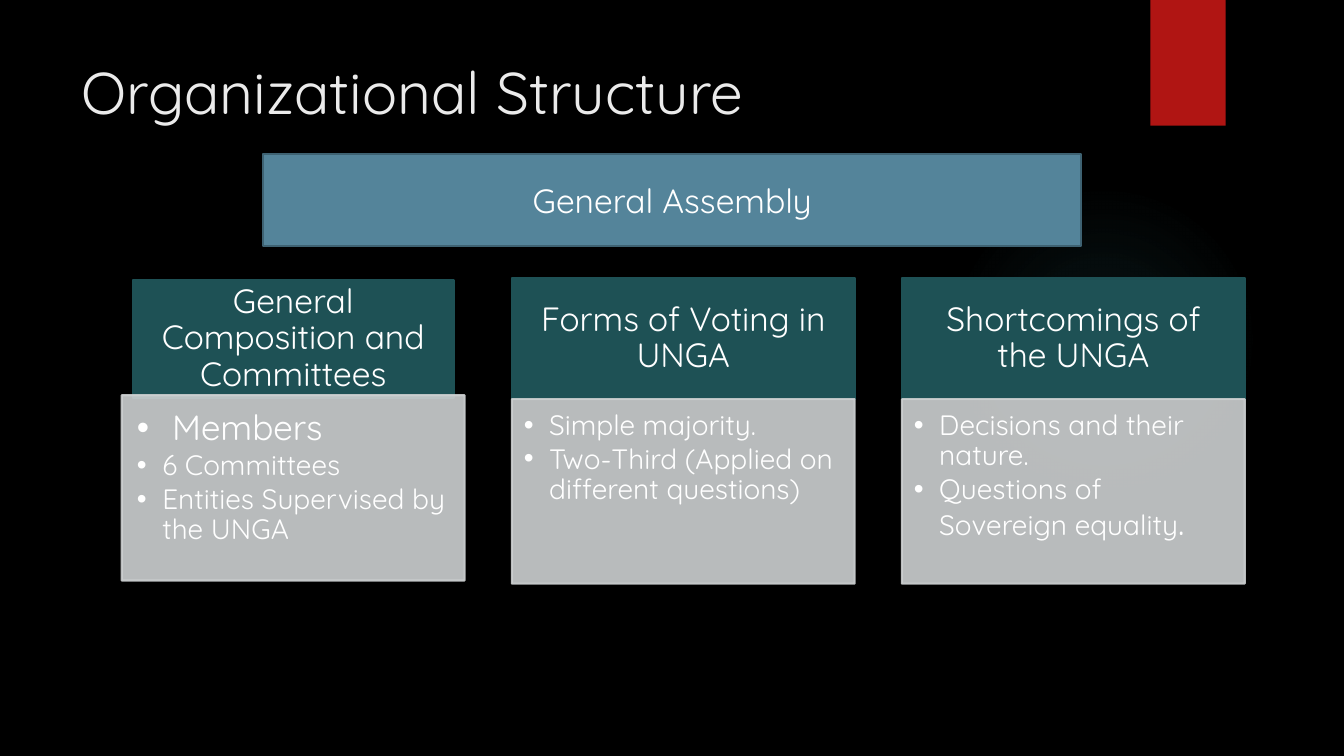
from dataclasses import dataclass

from lxml.etree import SubElement
from pptx import Presentation
from pptx.dml.color import RGBColor
from pptx.enum.shapes import MSO_SHAPE
from pptx.enum.text import MSO_ANCHOR, PP_ALIGN
from pptx.oxml import parse_xml
from pptx.oxml.ns import nsdecls, qn
from pptx.util import Cm, Pt


@dataclass(frozen=True)
class Theme:
    font: str = "Quicksand"
    background: str = "000000"
    title: str = "EBEBEB"
    text: str = "FFFFFF"
    ribbon: str = "B01513"
    glow: str = "50B9C1"
    banner: str = "54849A"
    banner_line: str = "3E6272"
    heading: str = "1E5155"
    body: str = "CDD0D1"
    body_opacity: int = 90
    title_size: float = 42
    heading_size: float = 24
    large_size: float = 25
    body_size: float = 20
    line_width: float = 1.5


THEME = Theme()

# Each bullet: text indent in cm, then runs of (text, size)
COLUMNS = [
    ("General Composition and Committees", [
        (0.89, [("Members", THEME.large_size)]),
        (0.64, [("6 Committees", THEME.body_size)]),
        (0.64, [("Entities Supervised by the UNGA", THEME.body_size)]),
    ]),
    ("Forms of Voting in UNGA", [
        (0.64, [("Simple majority.", THEME.body_size)]),
        (0.64, [("Two-Third (Applied on different questions)", THEME.body_size)]),
    ]),
    ("Shortcomings of the UNGA", [
        (0.64, [("Decisions and their nature.", THEME.body_size)]),
        (0.64, [("Questions of Sovereign equality", THEME.body_size),
                (".", THEME.large_size)]),
    ]),
]


def add_box(slide, box, fill, line=None, kind=MSO_SHAPE.RECTANGLE):
    shape = slide.shapes.add_shape(kind, *(Cm(length) for length in box))
    shape.shadow.inherit = False
    shape.fill.solid()
    shape.fill.fore_color.rgb = RGBColor.from_string(fill)
    if line:
        shape.line.color.rgb = RGBColor.from_string(line)
        shape.line.width = Pt(THEME.line_width)
    else:
        shape.line.fill.background()
    return shape


def set_frame(shape, anchor, insets=(0.25, 0.13, 0.25, 0.13)):
    frame = shape.text_frame
    frame.word_wrap = True
    frame.vertical_anchor = anchor
    (frame.margin_left, frame.margin_top,
     frame.margin_right, frame.margin_bottom) = (Cm(inset) for inset in insets)
    return frame


def add_run(paragraph, text, size, color=THEME.text):
    run = paragraph.add_run()
    run.text = text
    run.font.name = THEME.font
    run.font.size = Pt(size)
    run.font.color.rgb = RGBColor.from_string(color)


def add_centred_text(shape, text, insets, line_spacing):
    frame = set_frame(shape, MSO_ANCHOR.MIDDLE, insets)
    paragraph = frame.paragraphs[0]
    paragraph.alignment = PP_ALIGN.CENTER
    paragraph.line_spacing = line_spacing
    add_run(paragraph, text, THEME.heading_size)


def add_decoration(slide, glow_box, ribbon_box):
    # Soft round glow, fading outwards
    glow = add_box(slide, glow_box, THEME.glow, kind=MSO_SHAPE.OVAL)
    stops = "".join(
        f'<a:gs pos="{position}000"><a:srgbClr val="{THEME.glow}">'
        f'<a:alpha val="{opacity}000"/></a:srgbClr></a:gs>'
        for position, opacity in ((0, 7), (36, 6), (69, 0)))
    gradient = parse_xml(
        f'<a:gradFill {nsdecls("a")}><a:gsLst>{stops}</a:gsLst>'
        '<a:path path="circle"><a:fillToRect l="50000" t="50000" '
        'r="50000" b="50000"/></a:path></a:gradFill>')
    properties = glow.element.spPr
    properties.replace(properties.find(qn("a:solidFill")), gradient)
    # Ribbon at the top edge
    add_box(slide, ribbon_box, THEME.ribbon)


def add_title(slide, box, text):
    shape = slide.shapes.add_textbox(*(Cm(length) for length in box))
    frame = set_frame(shape, MSO_ANCHOR.TOP)
    add_run(frame.paragraphs[0], text, THEME.title_size, THEME.title)


def add_banner(slide, box, text):
    banner = add_box(slide, box, THEME.banner, THEME.banner_line)
    add_centred_text(banner, text, (0.25, 0.13, 0.25, 0.13), 1.0)


def add_heading(slide, box, text):
    heading = add_box(slide, box, THEME.heading, THEME.heading)
    add_centred_text(heading, text, (0.48, 0.28, 0.48, 0.28), 0.9)


def add_bullets(slide, box, insets, bullets):
    body = add_box(slide, box, THEME.body, THEME.body)
    for color in body.element.spPr.iter(qn("a:srgbClr")):
        SubElement(color, qn("a:alpha"), val=str(THEME.body_opacity * 1000))
    frame = set_frame(body, MSO_ANCHOR.TOP, insets)
    for index, (indent, runs) in enumerate(bullets):
        paragraph = frame.add_paragraph() if index else frame.paragraphs[0]
        paragraph.alignment = PP_ALIGN.LEFT
        paragraph.line_spacing = 0.9
        paragraph.space_after = Pt(2.5)
        properties = paragraph._p.get_or_add_pPr()
        properties.set("marL", str(Cm(indent)))
        properties.set("indent", str(-Cm(indent)))
        SubElement(properties, qn("a:buFont"), typeface="Arial")
        SubElement(properties, qn("a:buChar"), char="•")
        for text, size in runs:
            add_run(paragraph, text, size)


def add_columns(slide, left, top, width, pitch):
    for index, (heading, bullets) in enumerate(COLUMNS):
        x = left + index * pitch
        if index == 0:  # narrower heading, overlapped by its body
            heading_box = (x + 0.28, top + 0.05, width - 0.56, 2.97)
            body_box = (x, top + 2.95, width, 4.67)
            insets = (0.38, 0.38, 0.48, 0.56)
        else:
            heading_box = (x, top, width, 3.05)
            body_box = (x, top + 3.05, width, 4.65)
            insets = (0.3, 0.3, 0.41, 0.43)
        add_heading(slide, heading_box, heading)
        add_bullets(slide, body_box, insets, bullets)


def main():
    presentation = Presentation()
    presentation.slide_width = Cm(33.87)
    presentation.slide_height = Cm(19.05)
    slide = presentation.slides.add_slide(presentation.slide_layouts[6])
    slide.background.fill.solid()
    slide.background.fill.fore_color.rgb = RGBColor.from_string(THEME.background)

    add_decoration(slide, (23.9, 4.65, 7.82, 7.82), (28.99, 0, 1.9, 3.17))
    add_title(slide, (1.8, 1.27, 26.14, 3.89), "Organizational Structure")
    add_banner(slide, (6.63, 3.89, 20.62, 2.31), "General Assembly")
    add_columns(slide, left=3.07, top=7.01, width=8.64, pitch=9.83)
    presentation.save("out.pptx")


if __name__ == "__main__":
    main()
